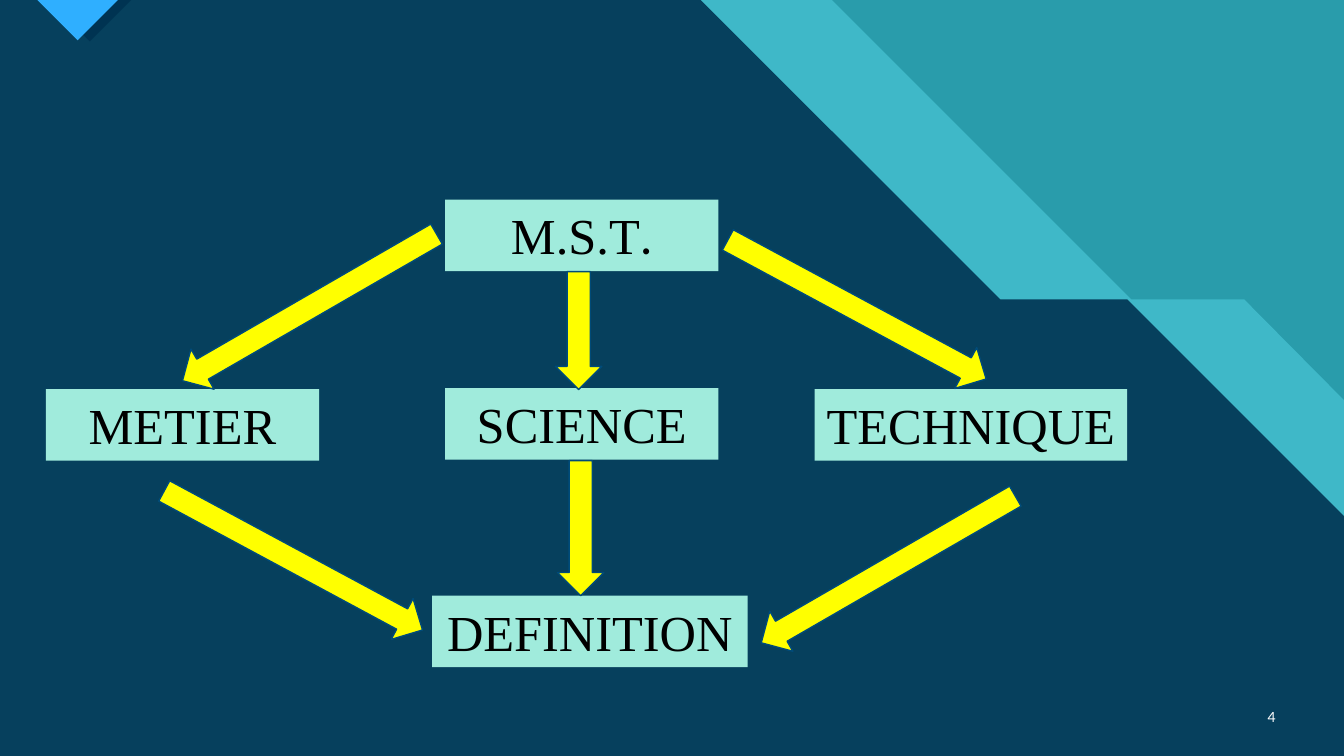
from pptx import Presentation
from pptx.dml.color import RGBColor
from pptx.enum.shapes import MSO_SHAPE as Preset
from pptx.enum.text import MSO_ANCHOR as Anchor, PP_ALIGN as Align
from pptx.oxml.ns import qn
from pptx.util import Inches, Pt
from lxml.etree import SubElement

# One grid column or row is one inch
COLUMNS, ROWS = 13.33, 7.5
TEAL, AQUA, NAVY, BLUE = "299CAB", "47C3D3", "003352", "2FAFFF"
MINT, YELLOW, EDGE = "A0EBDC", "FFFF00", "004B79"
SERIF = "Times New Roman"


def paint(fill, color, opacity=100):
    fill.solid()
    fill.fore_color.rgb = RGBColor.from_string(color)
    if opacity < 100:
        tint = fill._xPr.find(qn("a:solidFill"))[0]
        SubElement(tint, qn("a:alpha")).set("val", str(opacity * 1000))


def write(frame, *spans, size, color, align, anchor=Anchor.TOP, wrap=True):
    """Fill a text frame with one paragraph of (text, font) spans."""
    frame.word_wrap = wrap
    frame.vertical_anchor = anchor
    para = frame.paragraphs[0]
    para.alignment = align
    for text, font in spans:
        span = para.add_run()
        span.text = text
        span.font.name = font
        span.font.size = Pt(size)
        span.font.color.rgb = RGBColor.from_string(color)


def add_preset(page, preset, left, top, width, height, color):
    shape = page.shapes.add_shape(
        preset, Inches(left), Inches(top), Inches(width), Inches(height))
    shape.shadow.inherit = False
    paint(shape.fill, color)
    shape.line.fill.background()
    return shape


def add_outline(page, box, points, color, opacity=100):
    left, top = box[:2]
    corners = [(Inches(left + x), Inches(top + y)) for x, y in points]
    builder = page.shapes.build_freeform(*corners[0])
    builder.add_line_segments(corners[1:], close=True)
    shape = builder.convert_to_shape()
    shape.shadow.inherit = False
    paint(shape.fill, color, opacity)
    shape.line.fill.background()


def draw_backdrop(page, box):
    """Two stepped panels over a teal ground, with a marker at the top."""
    width, height = box[2:]
    paint(page.background.fill, TEAL)
    # Panels: top edge, start and end of the step, right edge
    for edge, step, step_end, drop, color, opacity in (
            (8.25, 11.22, 12.34, 3.97, AQUA, 74),
            (6.95, 9.92, 11.18, 5.12, NAVY, 90)):
        points = [(0, 0), (edge, 0), (step, 2.97), (step_end, 2.97),
                  (width, drop), (width, height), (0, height)]
        add_outline(page, box, points, color, opacity)
    # Marker and its shade
    for left, half, color in ((0.48, 0.41, NAVY), (0.37, 0.4, BLUE)):
        points = [(left, 0), (left + half, half), (left + 2 * half, 0)]
        add_outline(page, box, points, color)


def draw_number(page, box, number):
    label = page.shapes.add_textbox(*(Inches(length) for length in box))
    write(label.text_frame, (number, "Lato"), size=10, color="FFFFFF",
          align=Align.RIGHT, anchor=Anchor.MIDDLE)


def draw_diagram(page, box):
    """Labelled boxes joined by block arrows."""
    left, top = box[:2]
    # Boxes: centre, top, width, text
    for center, row, width, *spans in (
            (5.32, 0, 2.71, ("M.S.T", SERIF), (".", "Calibri")),
            (5.32, 1.87, 2.71, ("SCIENCE", SERIF)),
            (9.18, 1.88, 3.1, ("TECHNIQUE", SERIF)),
            (1.36, 1.88, 2.71, ("METIER", SERIF)),
            (5.4, 3.93, 3.13, ("DEFINITION", SERIF))):
        node = add_preset(page, Preset.RECTANGLE, left + center - width / 2,
                          top + row, width, 0.71, MINT)
        write(node.text_frame, *spans, size=36, color="000000",
              align=Align.CENTER, wrap=False)
    # Arrows: centre, length, rotation
    thick = 0.46
    for x, y, length, angle in (
            (5.29, 1.3, 1.17, 0), (2.62, 1.07, 2.91, 60),
            (8.05, 1.09, 2.91, 298.3), (5.31, 3.26, 1.34, 0),
            (2.46, 3.58, 2.91, 298.3), (8.36, 3.67, 2.91, 60)):
        arrow = add_preset(page, Preset.DOWN_ARROW, left + x - thick / 2,
                           top + y - length / 2, thick, length, YELLOW)
        arrow.rotation = angle
        paint(arrow.line.fill, EDGE)
        arrow.line.width = Pt(1)


def main():
    deck = Presentation()
    deck.slide_width, deck.slide_height = Inches(COLUMNS), Inches(ROWS)
    page = deck.slides.add_slide(deck.slide_layouts[6])
    draw_backdrop(page, (0, 0, COLUMNS, ROWS))
    draw_number(page, (12.31, 6.91, 0.44, 0.4), "4")
    draw_diagram(page, (0.45, 1.98, 10.73, 4.64))
    deck.save("out.pptx")


if __name__ == "__main__":
    main()
